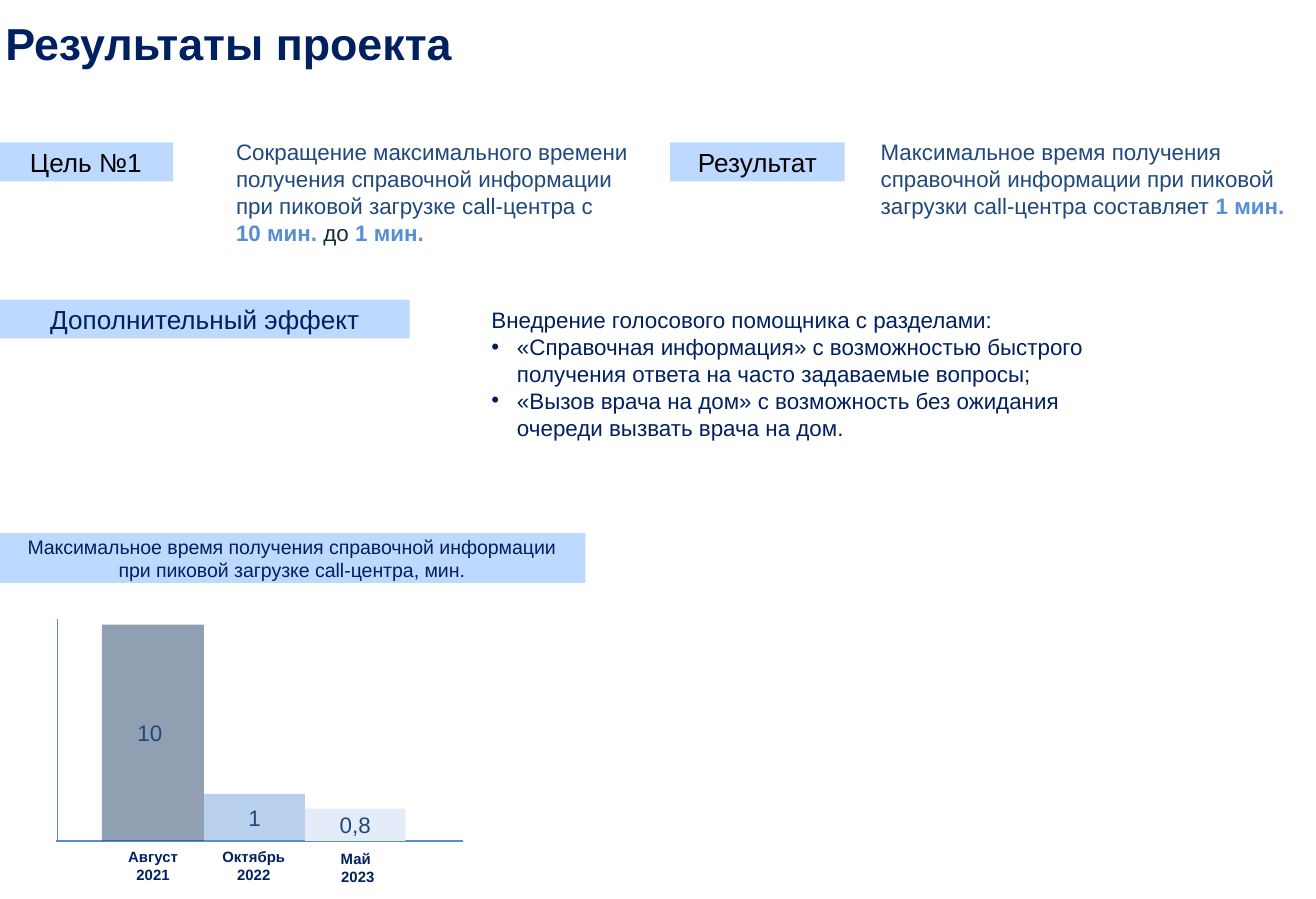
import dataclasses
import typing

import lxml.etree
import pptx
import pptx.dml.color
import pptx.enum.shapes
import pptx.enum.text
import pptx.oxml.ns
import pptx.util

PX = 9144
ALIGN = pptx.enum.text.PP_ALIGN
ANCHOR = pptx.enum.text.MSO_ANCHOR


@dataclasses.dataclass(frozen=True)
class Theme:
    font: str = "Arial"
    navy: str = "002060"
    blue: str = "1F497D"
    accent: str = "558ED5"
    dark: str = "102C34"
    black: str = "000000"
    label: str = "98C4FF"
    label_alpha: int = 64
    slate: str = "17375E"
    pale: str = "E3ECF8"
    title_size: float = 24
    label_size: float = 14
    body_size: float = 12
    caption_size: float = 10.5
    axis_size: float = 8
    axis_width: float = 0.75


THEME = Theme()


class Area(typing.NamedTuple):
    left: int
    top: int
    width: int
    height: int


class Span(typing.NamedTuple):
    text: str
    color: str
    bold: bool = False


Lines = list[list[Span]]


@dataclasses.dataclass(frozen=True)
class Block:
    area: Area
    text: str
    color: str
    size: float
    fill: str = THEME.label
    alpha: int = THEME.label_alpha


@dataclasses.dataclass(frozen=True)
class Note:
    area: Area
    lines: Lines
    size: float = THEME.body_size
    align: ALIGN = ALIGN.LEFT


@dataclasses.dataclass(frozen=True)
class Bar:
    value: str
    month: str
    year: str
    left: int
    top: int
    width: int
    fill: str
    alpha: int
    label: Area


BASELINE = 626
BLOCKS = [
    Block(Area(-1, 106, 130, 29), "Цель №1", THEME.black, THEME.label_size),
    Block(Area(499, 106, 130, 29), "Результат", THEME.black, THEME.label_size),
    Block(Area(0, 223, 305, 29), "Дополнительный эффект", THEME.navy, THEME.label_size),
    Block(Area(-1, 397, 437, 37),
          "Максимальное время получения справочной информации при пиковой загрузке call-центра, мин.",
          THEME.navy, THEME.caption_size),
]
NOTES = [
    Note(Area(166, 98, 314, 91), [
        [Span("Сокращение максимального времени получения справочной информации "
              "при пиковой загрузке call-центра с", THEME.blue)],
        [Span("10 мин. ", THEME.accent, True), Span("до ", THEME.dark),
         Span("1 мин.", THEME.accent, True)],
    ]),
    Note(Area(646, 98, 333, 71), [
        [Span("Максимальное время получения справочной информации при пиковой "
              "загрузки call-центра составляет ", THEME.blue),
         Span("1 мин.", THEME.accent, True)],
    ]),
]
BARS = [
    Bar("10 ", "Август", "2021", 76, 465, 76, THEME.slate, 48, Area(72, 626, 84, 37)),
    Bar("1", "Октябрь", "2022", 152, 591, 75, THEME.accent, 41, Area(143, 626, 92, 37)),
    Bar("0,8", "Май", " 2023", 227, 602, 75, THEME.pale, 100, Area(223, 628, 84, 37)),
]
AXES = [(43, 461, 43, BASELINE), (345, BASELINE, 42, BASELINE)]
EFFECT_LINES = [
    "Внедрение голосового помощника с разделами:",
    "«Справочная информация» с возможностью быстрого получения ответа на часто задаваемые вопросы;",
    "«Вызов врача на дом» с возможность без ожидания очереди вызвать врача на дом.",
]


def rgb(color: str) -> pptx.dml.color.RGBColor:
    return pptx.dml.color.RGBColor.from_string(color)


def add_child(parent, tag: str, **attributes: str):
    return lxml.etree.SubElement(parent, pptx.oxml.ns.qn(tag), attributes)


def place(box, area: Area) -> None:
    box.left, box.top, box.width, box.height = (side * PX for side in area)


def write(frame, lines: Lines, size: float, align: ALIGN) -> None:
    frame.word_wrap = True
    frame.auto_size = pptx.enum.text.MSO_AUTO_SIZE.NONE
    frame.text = "\n".join("" for line in lines)
    for para, line in zip(frame.paragraphs, lines):
        para.alignment = align
        para.space_before = pptx.util.Pt(0)
        for item in line:
            span = para.add_run()
            span.text = item.text
            span.font.name = THEME.font
            span.font.size = pptx.util.Pt(size)
            span.font.bold = item.bold
            span.font.color.rgb = rgb(item.color)


def add_block(page, block: Block) -> None:
    box = page.shapes.add_shape(pptx.enum.shapes.MSO_SHAPE.RECTANGLE,
                                *(side * PX for side in block.area))
    box.shadow.inherit = False
    box.line.fill.background()
    box.fill.solid()
    box.fill.fore_color.rgb = rgb(block.fill)
    if block.alpha < 100:
        color = box._element.spPr.find(".//" + pptx.oxml.ns.qn("a:srgbClr"))
        add_child(color, "a:alpha", val=str(block.alpha * 1000))
    box.text_frame.vertical_anchor = ANCHOR.MIDDLE
    write(box.text_frame, [[Span(block.text, block.color)]], block.size, ALIGN.CENTER)


def add_note(page, note: Note) -> None:
    box = page.shapes.add_textbox(*(side * PX for side in note.area))
    write(box.text_frame, note.lines, note.size, note.align)


def add_axis(page, ends: tuple[int, int, int, int]) -> None:
    axis = page.shapes.add_connector(pptx.enum.shapes.MSO_CONNECTOR.STRAIGHT,
                                     *(end * PX for end in ends))
    axis.line.color.rgb = rgb(THEME.accent)
    axis.line.width = pptx.util.Pt(THEME.axis_width)
    add_child(axis._element.spPr, "a:effectLst")


def add_bar(page, bar: Bar) -> None:
    area = Area(bar.left, bar.top, bar.width, BASELINE - bar.top)
    add_block(page, Block(area, bar.value, THEME.blue, THEME.body_size, bar.fill, bar.alpha))
    lines = [[Span(text, THEME.navy, True)] for text in (bar.month, bar.year)]
    add_note(page, Note(bar.label, lines, THEME.axis_size, ALIGN.CENTER))


def fill_title(title) -> None:
    place(title, Area(4, 12, 731, 40))
    frame = title.text_frame
    frame.margin_left = frame.margin_top = frame.margin_right = frame.margin_bottom = 0
    frame.vertical_anchor = ANCHOR.MIDDLE
    write(frame, [[Span("Результаты проекта", THEME.navy, True)]], THEME.title_size, ALIGN.LEFT)


def fill_effects(body) -> None:
    place(body, Area(356, 223, 504, 172))
    body.text_frame.vertical_anchor = ANCHOR.TOP
    write(body.text_frame, [[Span(text, THEME.navy)] for text in EFFECT_LINES],
          THEME.body_size, ALIGN.LEFT)
    for index, para in enumerate(body.text_frame.paragraphs):
        indent = 19 * PX if index else 0
        properties = para._p.get_or_add_pPr()
        properties.set("marL", str(indent))
        properties.set("indent", str(-indent))
        if index:
            add_child(properties, "a:buFont", typeface=THEME.font)
            add_child(properties, "a:buChar", char="•")
        else:
            add_child(properties, "a:buNone")


def main() -> None:
    deck = pptx.Presentation()
    deck.slide_width = pptx.util.Inches(9.8)
    deck.slide_height = pptx.util.Cm(17)
    page = deck.slides.add_slide(deck.slide_layouts[1])
    fill_title(page.shapes.title)
    fill_effects(page.placeholders[1])
    for block in BLOCKS:
        add_block(page, block)
    for note in NOTES:
        add_note(page, note)
    for ends in AXES:
        add_axis(page, ends)
    for bar in BARS:
        add_bar(page, bar)
    deck.save("out.pptx")


if __name__ == "__main__":
    main()
